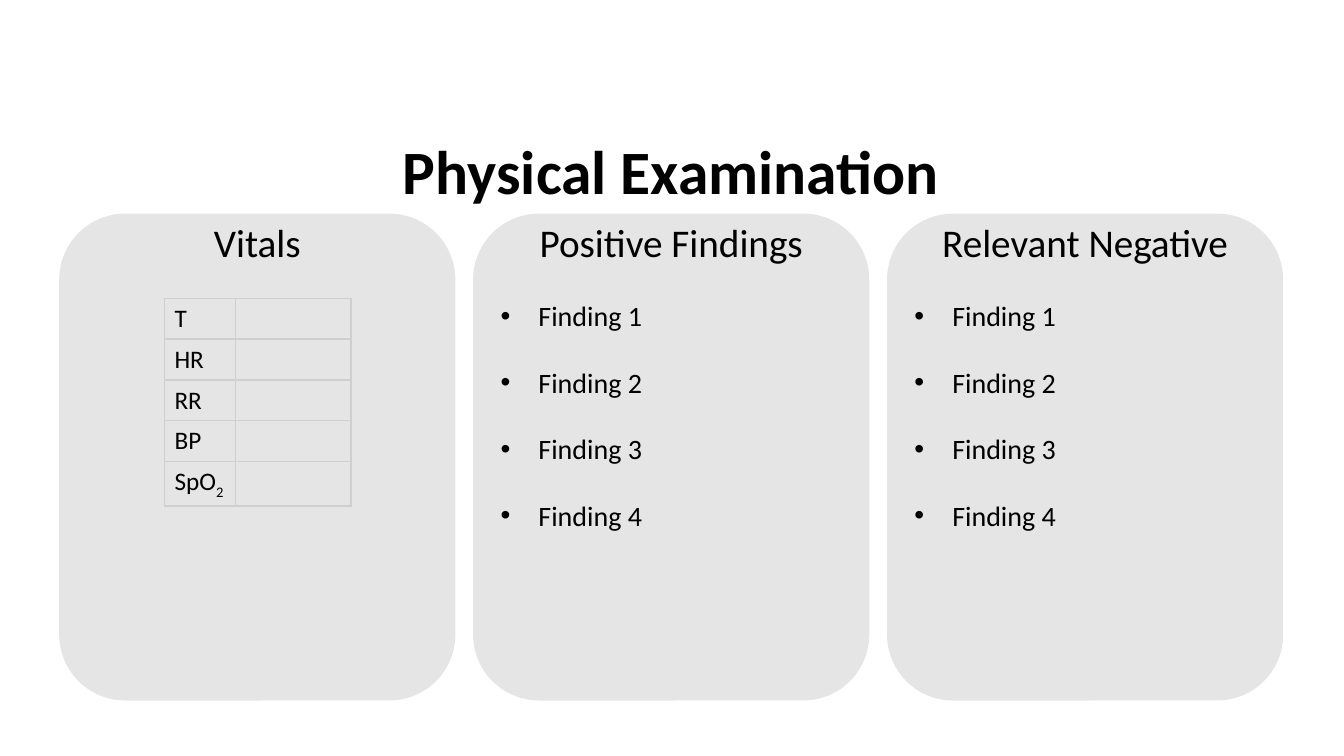
from lxml.etree import SubElement
from pptx import Presentation
from pptx.dml.color import RGBColor
from pptx.enum.shapes import MSO_SHAPE
from pptx.enum.text import MSO_ANCHOR, MSO_AUTO_SIZE, PP_ALIGN
from pptx.oxml.ns import qn
from pptx.util import Pt

BLACK = RGBColor(0x00, 0x00, 0x00)
BORDER_GREY = RGBColor(0xD0, 0xCE, 0xCE)

TITLE_FONT = {"name": "Calibri", "size": Pt(44), "bold": True}
HEADING_FONT = {"name": "Calibri", "size": Pt(28)}
FINDING_FONT = {"name": "Calibri", "size": Pt(20)}
VITAL_FONT = {"name": "Calibri", "size": Pt(18), "bold": False}

PANEL_LEFT, PANEL_TOP, PANEL_PITCH = 42.3, 152.6, 295.65
PANEL_WIDTH, PANEL_HEIGHT = 283, 347.8
TEXT_INSET = 12.4
FINDINGS = ["Finding 1", "Finding 2", "Finding 3", "Finding 4"]
VITALS = ["T", "HR", "RR", "BP", "SpO"]


def format_font(font, values):
    for name, value in values.items():
        setattr(font, name, value)
    font.color.rgb = BLACK


def set_bullet(paragraph, character, indent):
    """Set the bullet and hanging indent; no character means no bullet."""
    properties = paragraph._p.get_or_add_pPr()
    properties.set("marL", str(Pt(indent)))
    properties.set("indent", str(-Pt(indent)))
    if character:
        SubElement(properties, qn("a:buFont"), typeface="Arial")
        SubElement(properties, qn("a:buChar"), char=character)
    else:
        SubElement(properties, qn("a:buNone"))


presentation = Presentation()
presentation.slide_width = Pt(960)
presentation.slide_height = Pt(540)
slide = presentation.slides.add_slide(presentation.slide_layouts[3])
title, positive_box, negative_box = slide.placeholders

# Title
title.left, title.top, title.width, title.height = Pt(65.5), Pt(96.5), Pt(828), Pt(56.2)
title.text_frame.auto_size = MSO_AUTO_SIZE.NONE
title.text_frame.vertical_anchor = MSO_ANCHOR.MIDDLE
title.text_frame.text = "Physical Examination"
paragraph = title.text_frame.paragraphs[0]
paragraph.alignment = PP_ALIGN.CENTER
paragraph.line_spacing = 0.9
format_font(paragraph.font, TITLE_FONT)

# Panels with headings and findings
vitals_box = slide.shapes.add_textbox(0, 0, Pt(100), Pt(100))
panels = [
    (vitals_box, "Vitals", [], 113.8),
    (positive_box, "Positive Findings", FINDINGS, 234.7),
    (negative_box, "Relevant Negative", FINDINGS, 234.7),
]
for column, (box, heading, findings, height) in enumerate(panels):
    left = PANEL_LEFT + column * PANEL_PITCH
    panel = slide.shapes.add_shape(
        MSO_SHAPE.ROUNDED_RECTANGLE,
        Pt(left), Pt(PANEL_TOP), Pt(PANEL_WIDTH), Pt(PANEL_HEIGHT))
    panel.shadow.inherit = False
    panel.line.fill.background()
    panel.fill.solid()
    panel.fill.fore_color.rgb = BLACK
    fill_color = panel._element.spPr.find(qn("a:solidFill"))[0]
    SubElement(fill_color, qn("a:alpha"), val="10000")
    box._element.addprevious(panel._element)

    box.left, box.top = Pt(left + TEXT_INSET), Pt(PANEL_TOP)
    box.width, box.height = Pt(PANEL_WIDTH - 2 * TEXT_INSET), Pt(height)
    frame = box.text_frame
    frame.word_wrap = True
    frame.auto_size = MSO_AUTO_SIZE.NONE
    frame.vertical_anchor = MSO_ANCHOR.TOP
    frame.text = "\n".join([heading] + findings)
    for index, paragraph in enumerate(frame.paragraphs):
        is_heading = index == 0
        set_bullet(paragraph, "" if is_heading else "•", 0 if is_heading else 27)
        paragraph.alignment = PP_ALIGN.CENTER if is_heading else PP_ALIGN.LEFT
        paragraph.space_before = Pt(0 if is_heading else 23.5)
        format_font(paragraph.font, HEADING_FONT if is_heading else FINDING_FONT)

# Vitals table
table = slide.shapes.add_table(
    len(VITALS), 2, Pt(117.5), Pt(213), Pt(133.2), Pt(148.2)).table
table.first_row = False
table.horz_banding = False
for column, width in zip(table.columns, (51, 82.2)):
    column.width = Pt(width)
for row, height, vital in zip(table.rows, (29.2, 29.2, 29.2, 29.2, 31.4), VITALS):
    row.height = Pt(height)
    row.cells[0].text = vital
    for cell in row.cells:
        cell.vertical_anchor = MSO_ANCHOR.MIDDLE
        properties = cell._tc.get_or_add_tcPr()
        for side in ("lnL", "lnR", "lnT", "lnB"):
            border = SubElement(properties, qn(f"a:{side}"), w=str(Pt(1)))
            border_fill = SubElement(border, qn("a:solidFill"))
            SubElement(border_fill, qn("a:srgbClr"), val=str(BORDER_GREY))
        cell.fill.background()
        format_font(cell.text_frame.paragraphs[0].font, VITAL_FONT)

oxygen_paragraph = table.cell(len(VITALS) - 1, 0).text_frame.paragraphs[0]
subscript = oxygen_paragraph.add_run()
subscript.text = "2"
format_font(subscript.font, VITAL_FONT)
subscript.font._element.set("baseline", "-25000")

presentation.save("out.pptx")
